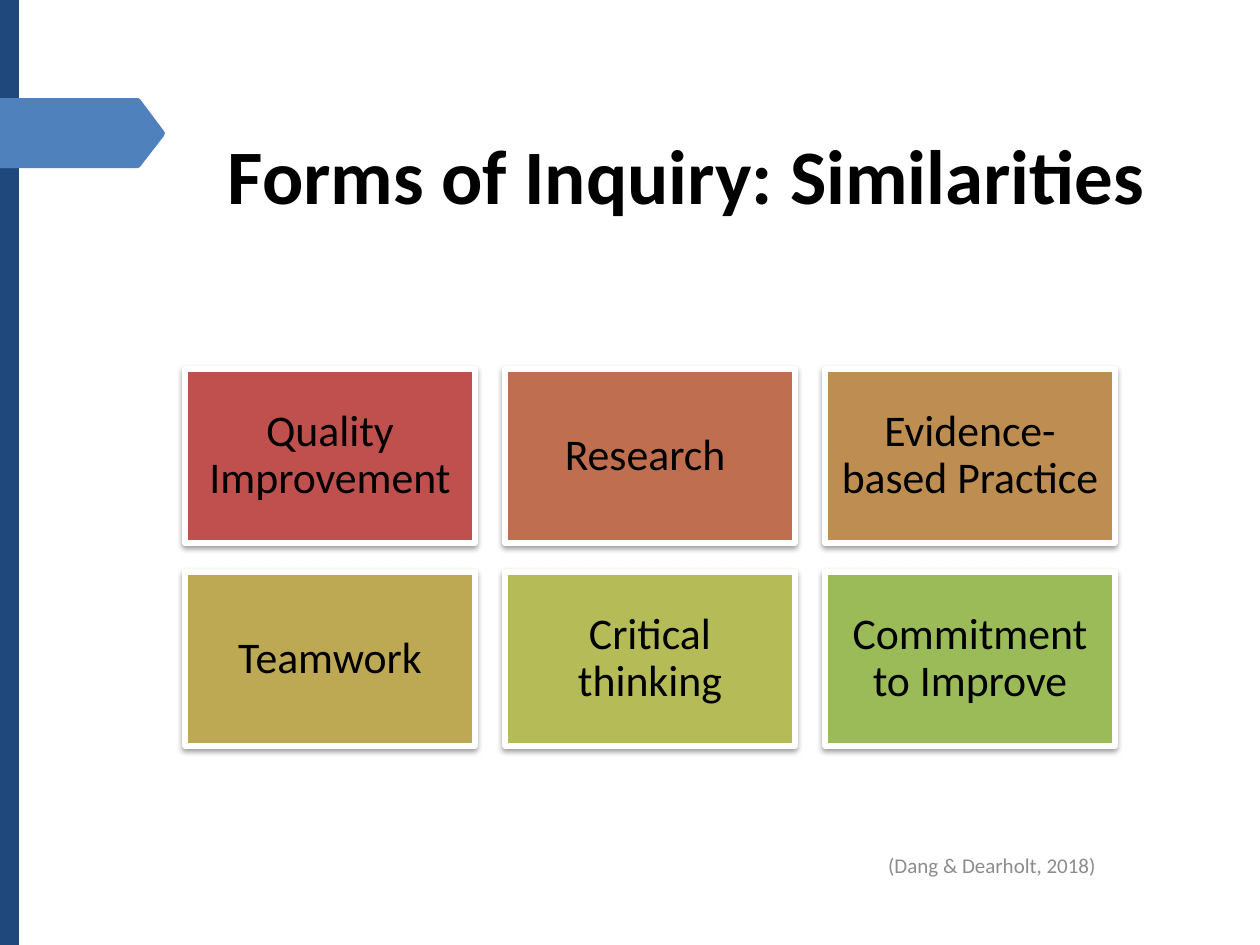
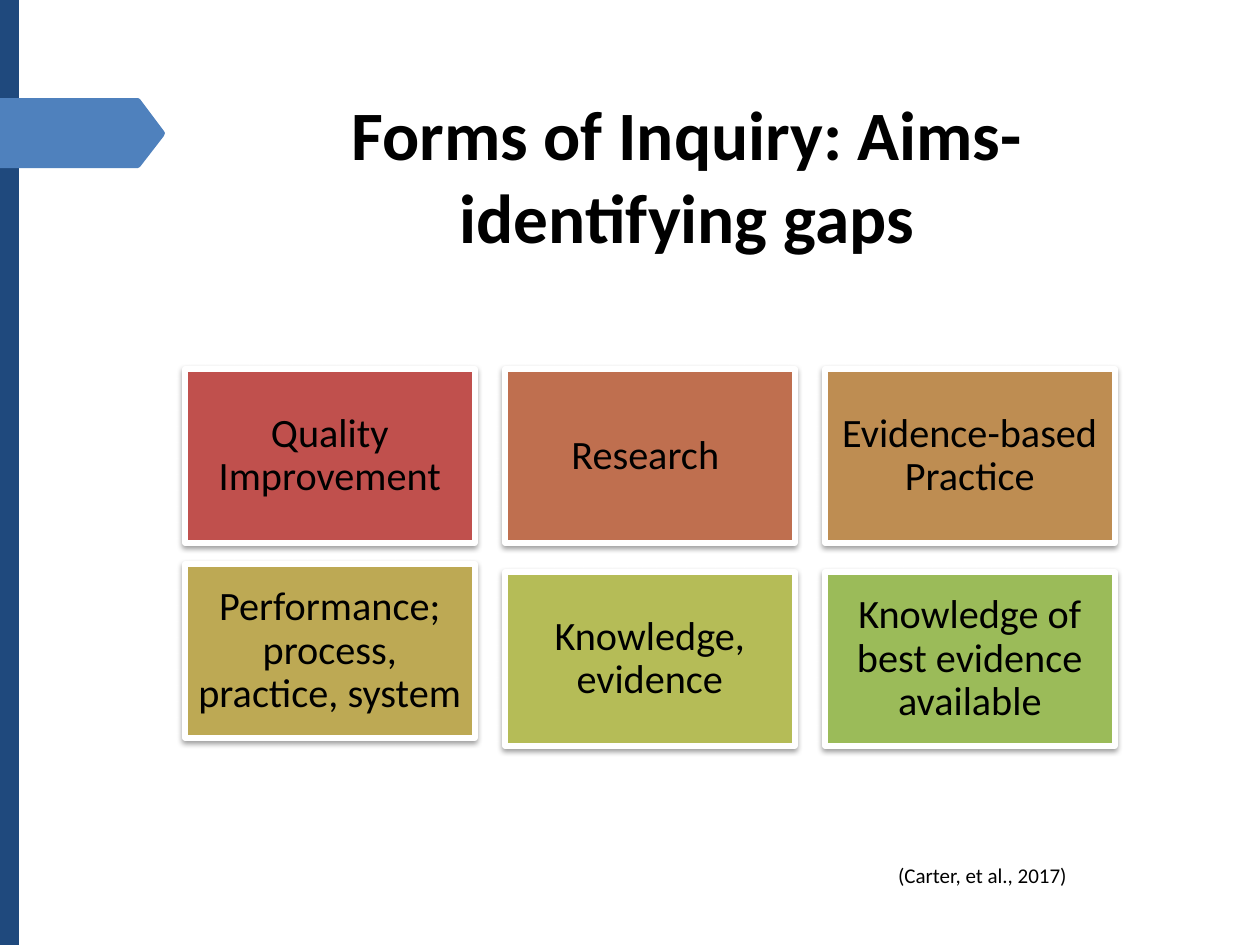
"""Build two slides that compare forms of inquiry in tile grids."""
import pptx
import pptx.dml.color
import pptx.enum.shapes
import pptx.enum.text
import pptx.oxml
import pptx.oxml.ns
import pptx.util

SCALE = 914400 / 126
RECTANGLE = pptx.enum.shapes.MSO_SHAPE.RECTANGLE
BLACK, WHITE, NAVY, BLUE, GREY = "000000", "FFFFFF", "1F497D", "4F81BD", "8C8C8C"
TILE_COLOURS = ["C0504D", "BF6F4F", "BE8D52", "BDA954", "B5BC57", "9BBB59"]
TITLE_PLACE = (185, 86, 1004, 176)
ARROW_POINTS = [(140, 167), (138, 168), (0, 168), (0, 98), (138, 98),
                (140, 99), (164, 131), (165, 133)]
TILE_LEFT, TILE_TOP, TILE_WIDTH, TILE_HEIGHT = 185, 369, 290, 174
COLUMN_STEP, ROW_STEP, COLUMNS, TILE_INSET = 320, 203, 3, 13
SHADOW = (
    f'<a:outerShdw {pptx.oxml.ns.nsdecls("a")} blurRad="39370" dist="20320" '
    'dir="5400000" rotWithShape="0"><a:srgbClr val="000000">'
    '<a:alpha val="38000"/></a:srgbClr></a:outerShdw>'
)
SLIDES = [
    {
        "title": "Forms of Inquiry: Similarities", "title_size": 44,
        "tiles": ["Quality Improvement", "Research ", "Evidence-based Practice",
                  "Teamwork", "Critical thinking", "Commitment to Improve"],
        "tile_size": 25, "raised": {},
        "citation": "(Dang & Dearholt, 2018)",
        "citation_place": (851, 834, 282, 62), "citation_colour": GREY,
    },
    {
        "title": "Forms of Inquiry: Aims-identifying gaps", "title_size": 39.6,
        "tiles": ["Quality Improvement", "Research ", "Evidence-based Practice",
                  "Performance; process, practice, system",
                  "Knowledge, evidence", "Knowledge of best evidence available"],
        "tile_size": 23, "raised": {3: 8},
        "citation": "(Carter, et al., 2017)",
        "citation_place": (851, 848, 263, 55), "citation_colour": BLACK,
    },
]


def colour(value):
    return pptx.dml.color.RGBColor.from_string(value)


def write(box, text, size, ink=BLACK, bold=False):
    frame = box.text_frame
    frame.word_wrap = True
    frame.vertical_anchor = pptx.enum.text.MSO_ANCHOR.MIDDLE
    para = frame.paragraphs[0]
    para.alignment = pptx.enum.text.PP_ALIGN.CENTER
    span = para.add_run()
    span.text = text
    for name, value in {"name": "Calibri", "size": pptx.util.Pt(size), "bold": bold}.items():
        setattr(span.font, name, value)
    span.font.color.rgb = colour(ink)
    return frame


deck = pptx.Presentation()
deck.slide_width = round(1260 * SCALE)
deck.slide_height = round(945 * SCALE)

for content in SLIDES:
    page = deck.slides.add_slide(deck.slide_layouts[6])

    title = page.shapes.add_textbox(*[round(n * SCALE) for n in TITLE_PLACE])
    write(title, content["title"], content["title_size"], bold=True)

    band = page.shapes.add_shape(RECTANGLE, 0, 0, round(19 * SCALE), deck.slide_height)
    outline = page.shapes.build_freeform(164, 136, scale=SCALE)
    outline.add_line_segments(ARROW_POINTS, close=True)
    arrow = outline.convert_to_shape()
    for shape, fill in [(band, NAVY), (arrow, BLUE)]:
        shape.shadow.inherit = False
        shape.fill.solid()
        shape.fill.fore_color.rgb = colour(fill)
        shape.line.fill.background()

    for index, (text, fill) in enumerate(zip(content["tiles"], TILE_COLOURS)):
        row, column = divmod(index, COLUMNS)
        place = (TILE_LEFT + column * COLUMN_STEP,
                 TILE_TOP + row * ROW_STEP - content["raised"].get(index, 0),
                 TILE_WIDTH, TILE_HEIGHT)
        tile = page.shapes.add_shape(RECTANGLE, *[round(n * SCALE) for n in place])
        tile.fill.solid()
        tile.fill.fore_color.rgb = colour(fill)
        tile.line.color.rgb = colour(WHITE)
        tile.line.width = pptx.util.Pt(3)
        tile.shadow.inherit = False
        effects = tile._element.spPr.find(pptx.oxml.ns.qn("a:effectLst"))
        effects.append(pptx.oxml.parse_xml(SHADOW))
        frame = write(tile, text, content["tile_size"])
        frame.paragraphs[0].line_spacing = 0.9
        for side in ("left", "top", "right", "bottom"):
            setattr(frame, f"margin_{side}", round(TILE_INSET * SCALE))

    citation = page.shapes.add_textbox(*[round(n * SCALE) for n in content["citation_place"]])
    write(citation, content["citation"], 12, content["citation_colour"])

deck.save("out.pptx")
